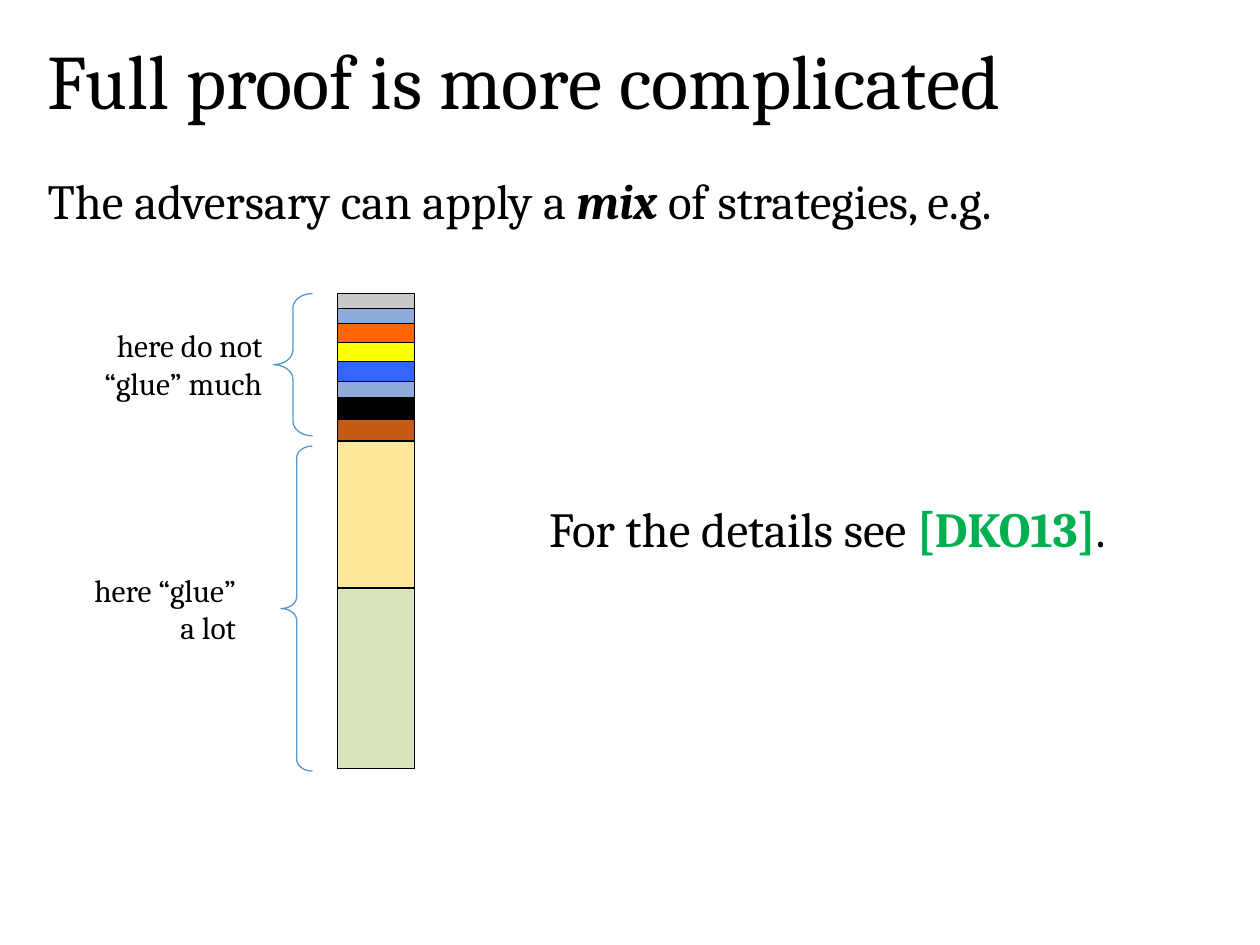
"""Build the slide on mixed gluing strategies."""
import lxml.etree
import pptx
import pptx.dml.color
import pptx.enum.shapes
import pptx.enum.text
import pptx.oxml.ns
import pptx.util

Inches, Pt = pptx.util.Inches, pptx.util.Pt
ALIGN, ANCHOR = pptx.enum.text.PP_ALIGN, pptx.enum.text.MSO_ANCHOR
COLOURS = {
    "black": "000000", "grey": "C9C9C9", "pale_blue": "8FAADC",
    "orange": "FF6600", "yellow": "FFFF00", "blue": "3366FF",
    "brown": "C55A11", "cream": "FFE699", "sage": "D7E4BD",
    "brace": "5698D3", "green": "00B050",
}
TITLE = ([("Full proof is more complicated", {})],
         (0.28, 0.29, 9.53, 0.86), 44, {"line_spacing": 0.9}, True)
TEXTS = [
    ([("The adversary can apply a ", {}), ("mix", {"bold": True, "italic": True}),
      (" of strategies, e.g.", {})],
     (0.28, 1.36, 9.53, 0.71), 28, {"line_spacing": 0.9}, True),
    ([("here do not “glue” much", {})],
     (0.28, 2.54, 1.9, 0.71), 18, {"alignment": ALIGN.RIGHT}, True),
    ([("here “glue” a lot", {})],
     (0.55, 4.48, 1.42, 0.71), 18, {"alignment": ALIGN.RIGHT}, True),
    ([("For the details see ", {}), ("[DKO13]", {"bold": True, "colour": "green"}),
      (".", {})],
     (4.26, 3.91, 4.96, 0.57), 28, {}, False),
]
BLOCKS = [
    ("grey", 0.12), ("pale_blue", 0.12), ("orange", 0.15), ("yellow", 0.15),
    ("blue", 0.16), ("pale_blue", 0.13), ("black", 0.17), ("brown", 0.17),
    ("cream", 1.17), ("sage", 1.43),
]
STACK = (2.68, 2.33, 0.61)
BRACES = [(2.17, 2.33, 0.31, 1.13), (2.23, 3.54, 0.25, 2.58)]


def rgb(name):
    return pptx.dml.color.RGBColor.from_string(COLOURS[name])


def assign(target, values):
    for name, value in values.items():
        setattr(target, name, value)


def write(box, spans, place, size, layout, wrap):
    sides = ("left", "top", "width", "height")
    assign(box, dict(zip(sides, map(Inches, place))))
    assign(box.text_frame, {"word_wrap": wrap, "vertical_anchor": ANCHOR.TOP})
    para = box.text_frame.paragraphs[0]
    assign(para, {"alignment": ALIGN.LEFT, **layout})
    for text, style in spans:
        span = para.add_run()
        span.text = text
        look = {"name": "Cambria", "size": Pt(size), "bold": False, "italic": False}
        look.update(style)
        span.font.color.rgb = rgb(look.pop("colour", "black"))
        assign(span.font, look)


def add_child(parent, tag, **attributes):
    return lxml.etree.SubElement(parent, pptx.oxml.ns.qn(tag), attributes)


def format_cell(cell, colour):
    margins = ("margin_left", "margin_right", "margin_top", "margin_bottom")
    assign(cell, dict.fromkeys(margins, 0))
    add_child(cell.text_frame.paragraphs[0]._p, "a:endParaRPr", sz="100")
    properties = cell._tc.get_or_add_tcPr()
    for side in ("a:lnL", "a:lnR", "a:lnT", "a:lnB"):
        line = add_child(properties, side, w=str(Pt(1)))
        add_child(add_child(line, "a:solidFill"), "a:srgbClr", val=COLOURS["black"])
    cell.fill.solid()
    cell.fill.fore_color.rgb = rgb(colour)


def add_stack(page):
    left, top, width = map(Inches, STACK)
    height = Inches(sum(height for _, height in BLOCKS))
    table = page.shapes.add_table(len(BLOCKS), 1, left, top, width, height).table
    assign(table, {"first_row": False, "horz_banding": False})
    for index, (colour, height) in enumerate(BLOCKS):
        table.rows[index].height = Inches(height)
        format_cell(table.cell(index, 0), colour)


def add_brace(page, place):
    kind = pptx.enum.shapes.MSO_SHAPE.LEFT_BRACE
    brace = page.shapes.add_shape(kind, *map(Inches, place))
    brace.adjustments[0] = 0.372
    brace.shadow.inherit = False
    brace.fill.background()
    brace.line.color.rgb = rgb("brace")
    brace.line.width = Pt(0.75)


def main():
    deck = pptx.Presentation()
    assign(deck, {"slide_width": Inches(10), "slide_height": Inches(7.5)})
    page = deck.slides.add_slide(deck.slide_layouts.get_by_name("Title Only"))
    write(page.shapes.title, *TITLE)
    add_stack(page)
    for place in BRACES:
        add_brace(page, place)
    for text in TEXTS:
        write(page.shapes.add_textbox(0, 0, 0, 0), *text)
    deck.save("out.pptx")


if __name__ == "__main__":
    main()
